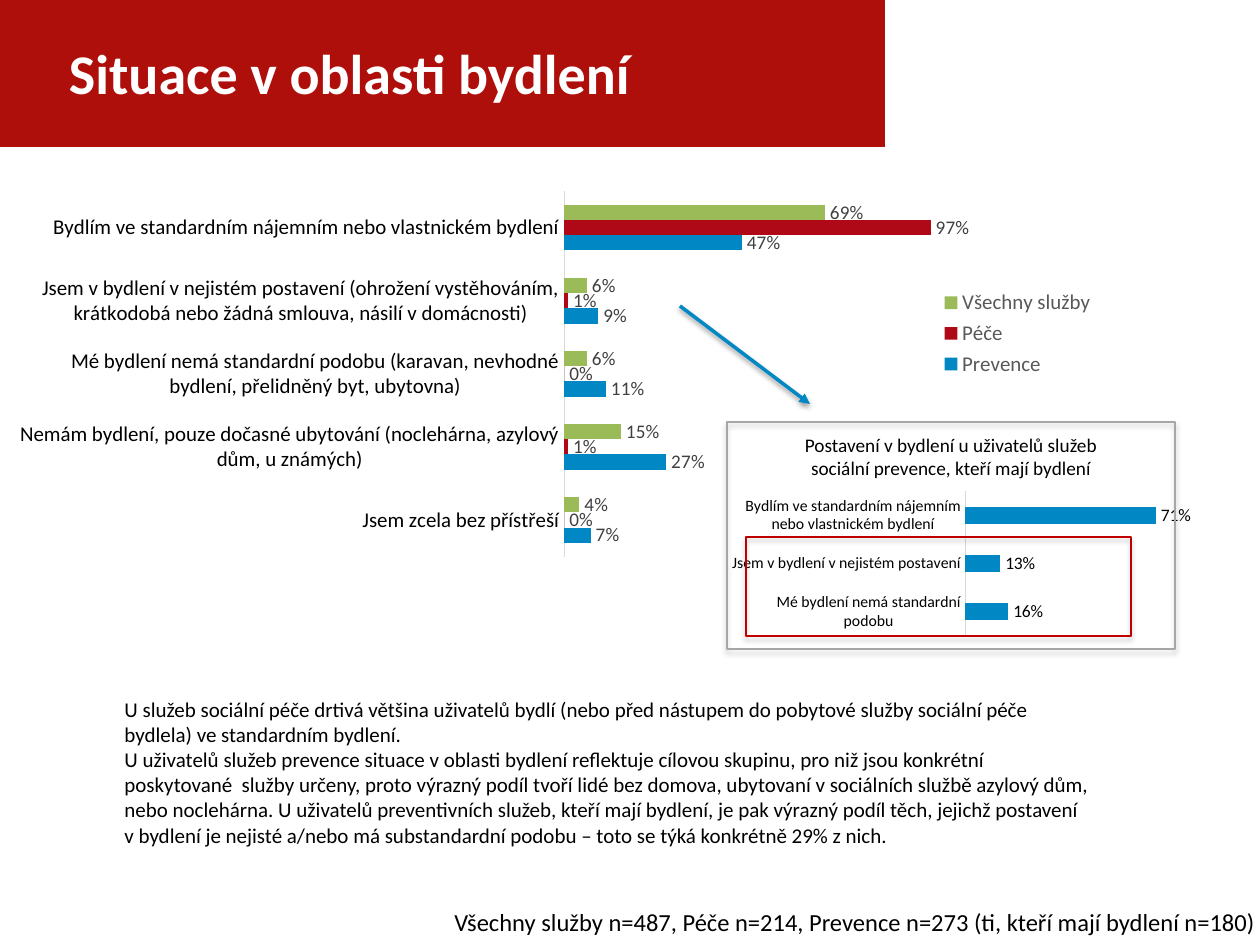
import pptx
import pptx.chart.data
import pptx.dml.color
import pptx.enum.chart
import pptx.enum.shapes
import pptx.enum.text
import pptx.oxml
import pptx.oxml.ns
import pptx.util
from dataclasses import dataclass
from typing import NamedTuple

EMU_PER_PX = 914400 / 126


@dataclass(frozen=True)
class Theme:
    font: str = "Calibri"
    banner: str = "AF0F0A"
    white: str = "FFFFFF"
    black: str = "000000"
    blue: str = "0087C4"
    red: str = "AF0817"
    green: str = "9BBB59"
    axis: str = "D9D9D9"
    frame: str = "A6A6A6"
    highlight: str = "C00000"
    legend: str = "595959"
    label: str = "404040"
    title_size: int = 32
    note_size: int = 14
    body_size: int = 12
    caption_size: int = 11
    small_label_size: int = 10
    small_size: int = 9


THEME = Theme()


class Area(NamedTuple):
    left: int
    top: int
    width: int
    height: int


class Series(NamedTuple):
    name: str
    values: list
    color: str


@dataclass(frozen=True)
class BarChart:
    area: Area
    categories: list
    series: list
    maximum: float
    plot: tuple
    axis_size: int
    label_size: int
    label_color: str
    legend: tuple = ()


@dataclass(frozen=True)
class TextBlock:
    area: Area
    paragraphs: list
    size: int
    centered: bool = False


@dataclass(frozen=True)
class Frame:
    area: Area
    color: str


def px(length: float) -> int:
    return pptx.util.Emu(round(length * EMU_PER_PX))


def rgb(color: str):
    return pptx.dml.color.RGBColor.from_string(color)


def set_font(font, size: int, color: str, bold: bool = False) -> None:
    font.name, font.size, font.bold = THEME.font, pptx.util.Pt(size), bold
    font.color.rgb = rgb(color)


def add_shadow(shape, opacity: int) -> None:
    """Soft shadow straight below the shape."""
    shape._element.spPr.append(pptx.oxml.parse_xml(
        f'<a:effectLst {pptx.oxml.ns.nsdecls("a")}>'
        '<a:outerShdw blurRad="39370" dist="22860" dir="5400000" rotWithShape="0">'
        f'<a:srgbClr val="{THEME.black}"><a:alpha val="{opacity * 1000}"/></a:srgbClr>'
        '</a:outerShdw></a:effectLst>'))


def set_layout(parent, fractions: tuple, inner: bool = False) -> None:
    """Fix a chart part at x, y, width, height as shares of the chart."""
    for old in parent.findall(pptx.oxml.ns.qn("c:layout")):
        parent.remove(old)
    target = '<c:layoutTarget val="inner"/>' if inner else ""
    modes = '<c:xMode val="edge"/><c:yMode val="edge"/>'
    places = "".join(f'<c:{key} val="{value}"/>' for key, value in zip("xywh", fractions))
    layout = pptx.oxml.parse_xml(
        f'<c:layout {pptx.oxml.ns.nsdecls("c")}><c:manualLayout>'
        f'{target}{modes}{places}</c:manualLayout></c:layout>')
    before = parent.find(pptx.oxml.ns.qn("c:legendPos"))
    if before is None:
        parent.insert(0, layout)
    else:
        before.addnext(layout)


def draw_chart(page, item: BarChart) -> None:
    data = pptx.chart.data.CategoryChartData(number_format="0%")
    data.categories = item.categories
    for series in item.series:
        data.add_series(series.name, series.values)
    kind = pptx.enum.chart.XL_CHART_TYPE.BAR_CLUSTERED
    chart = page.shapes.add_chart(kind, *map(px, item.area), data).chart
    chart.has_title = False
    set_font(chart.font, item.axis_size, THEME.black)
    set_layout(chart._chartSpace.chart.plotArea, item.plot, inner=True)

    # Axes
    axis = chart.category_axis
    axis.major_tick_mark = pptx.enum.chart.XL_TICK_MARK.NONE
    axis.format.line.color.rgb = rgb(THEME.axis)
    axis.format.line.width = pptx.util.Pt(0.75)
    set_font(axis.tick_labels.font, item.axis_size, THEME.black)
    scale = chart.value_axis
    scale.minimum_scale, scale.maximum_scale = 0, item.maximum
    scale.has_major_gridlines = False
    scale.visible = False

    # Bars and their values
    plot = chart.plots[0]
    plot.gap_width, plot.overlap, plot.vary_by_categories = 182, 0, False
    for bars, series in zip(plot.series, item.series):
        bars.format.fill.solid()
        bars.format.fill.fore_color.rgb = rgb(series.color)
        labels = bars.data_labels
        labels.show_value = True
        labels.number_format, labels.number_format_is_linked = "0%", False
        labels.position = pptx.enum.chart.XL_LABEL_POSITION.OUTSIDE_END
        set_font(labels.font, item.label_size, item.label_color)

    chart.has_legend = bool(item.legend)
    if item.legend:
        chart.legend.position = pptx.enum.chart.XL_LEGEND_POSITION.RIGHT
        chart.legend.include_in_layout = False
        set_font(chart.legend.font, THEME.body_size, THEME.legend)
        set_layout(chart.legend._element, item.legend)


def draw_text(page, item: TextBlock) -> None:
    frame = page.shapes.add_textbox(*map(px, item.area)).text_frame
    frame.word_wrap = True
    for index, text in enumerate(item.paragraphs):
        para = frame.add_paragraph() if index else frame.paragraphs[0]
        para.text = text
        set_font(para.font, item.size, THEME.black)
        if item.centered:
            para.alignment = pptx.enum.text.PP_ALIGN.CENTER


def draw_frame(page, item: Frame) -> None:
    box = page.shapes.add_shape(pptx.enum.shapes.MSO_SHAPE.RECTANGLE, *map(px, item.area))
    box.fill.background()
    box.line.color.rgb = rgb(item.color)
    box.line.width = pptx.util.Pt(0.75)
    add_shadow(box, 35)


def draw_banner(page, area: Area, title: str) -> None:
    box = page.shapes.add_shape(pptx.enum.shapes.MSO_SHAPE.RECTANGLE, *map(px, area))
    box.shadow.inherit = False
    box.fill.solid()
    box.fill.fore_color.rgb = rgb(THEME.banner)
    box.line.fill.background()
    frame = box.text_frame
    frame.word_wrap = True
    frame.margin_left = px(69)
    frame.vertical_anchor = pptx.enum.text.MSO_ANCHOR.MIDDLE
    para = frame.paragraphs[0]
    para.text = title
    para.alignment = pptx.enum.text.PP_ALIGN.LEFT
    set_font(para.font, THEME.title_size, THEME.white, bold=True)


def draw_arrow(page, start: tuple, end: tuple) -> None:
    arrow = page.shapes.add_connector(
        pptx.enum.shapes.MSO_CONNECTOR.STRAIGHT, *map(px, start + end))
    arrow.line.color.rgb = rgb(THEME.blue)
    arrow.line.width = pptx.util.Pt(2)
    arrow.line._get_or_add_ln().append(pptx.oxml.parse_xml(
        f'<a:tailEnd {pptx.oxml.ns.nsdecls("a")} type="triangle"/>'))
    add_shadow(arrow, 38)


HOUSING = BarChart(
    Area(20, 171, 1084, 406),
    ["Jsem zcela bez přístřeší",
     "Nemám bydlení, pouze dočasné ubytování (noclehárna, azylový dům, u známých)",
     "Mé bydlení nemá standardní podobu (karavan, nevhodné bydlení, přelidněný byt, ubytovna)",
     "Jsem v bydlení v nejistém postavení (ohrožení vystěhováním, krátkodobá nebo žádná smlouva, "
     "násilí v domácnosti)",
     "Bydlím ve standardním nájemním nebo vlastnickém bydlení"],
    [Series("Prevence", [0.07, 0.27, 0.11, 0.09, 0.47], THEME.blue),
     Series("Péče", [0, 0.01, 0, 0.01, 0.97], THEME.red),
     Series("Všechny služby", [0.04, 0.15, 0.06, 0.06, 0.69], THEME.green)],
    1.2, (0.5, 0.05, 0.42, 0.9), THEME.body_size, THEME.caption_size, THEME.label,
    legend=(0.84, 0.28, 0.16, 0.24))

PREVENTION = BarChart(
    Area(732, 473, 467, 181),
    ["Mé bydlení nemá standardní podobu", "Jsem v bydlení v nejistém postavení",
     "Bydlím ve standardním nájemním nebo vlastnickém bydlení"],
    [Series("Prevence", [0.16, 0.13, 0.71], THEME.blue)],
    0.8, (0.5, 0.1, 0.46, 0.8), THEME.small_size, THEME.small_label_size, THEME.black)

TEXTS = [
    TextBlock(Area(442, 901, 867, 43),
              ["Všechny služby n=487, Péče n=214, Prevence n=273 (ti, kteří mají bydlení n=180)"],
              THEME.note_size),
    TextBlock(Area(112, 690, 992, 165),
              ["U služeb sociální péče drtivá většina uživatelů bydlí (nebo před nástupem do pobytové "
               "služby sociální péče bydlela) ve standardním bydlení.",
               "U uživatelů služeb prevence situace v oblasti bydlení reflektuje cílovou skupinu, pro "
               "niž jsou konkrétní poskytované  služby určeny, proto výrazný podíl tvoří lidé bez "
               "domova, ubytovaní v sociálních službě azylový dům, nebo noclehárna. U uživatelů "
               "preventivních služeb, kteří mají bydlení, je pak výrazný podíl těch, jejichž postavení "
               "v bydlení je nejisté a/nebo má substandardní podobu – toto se týká konkrétně 29% z nich."],
              THEME.body_size),
    TextBlock(Area(770, 427, 362, 59),
              ["Postavení v bydlení u uživatelů služeb sociální prevence, kteří mají bydlení"],
              THEME.caption_size, centered=True)]


def main() -> None:
    deck = pptx.Presentation()
    deck.slide_width, deck.slide_height = px(1260), px(945)
    page = deck.slides.add_slide(deck.slide_layouts[6])
    draw_banner(page, Area(0, -3, 885, 150), "Situace v oblasti bydlení")
    for chart in (HOUSING, PREVENTION):
        draw_chart(page, chart)
    for block in TEXTS:
        draw_text(page, block)
    # Detail panel, the arrow to it, and the highlighted rows
    draw_frame(page, Frame(Area(727, 422, 448, 227), THEME.frame))
    draw_arrow(page, (680, 306), (810, 404))
    draw_frame(page, Frame(Area(746, 537, 385, 99), THEME.highlight))
    deck.save("out.pptx")


if __name__ == "__main__":
    main()
